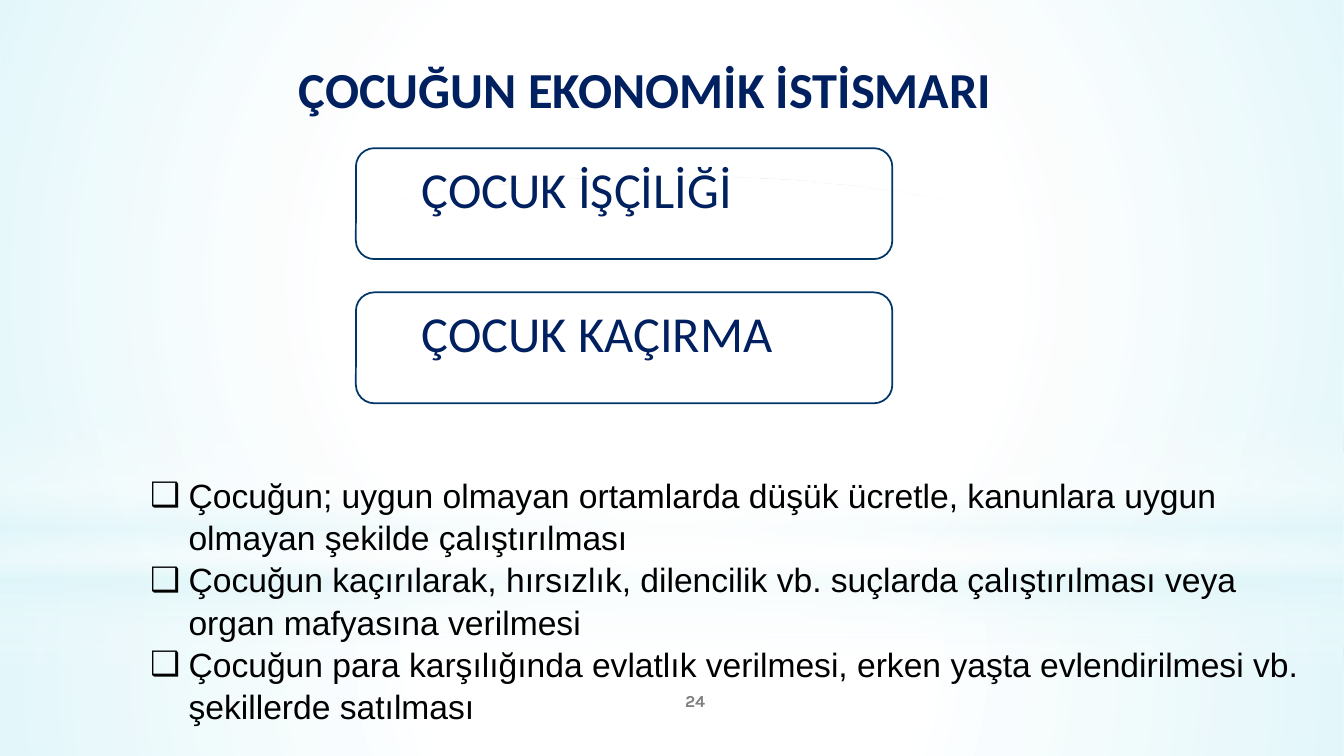
from dataclasses import dataclass
from typing import Optional

from lxml.etree import SubElement
from pptx import Presentation
from pptx.dml.color import RGBColor
from pptx.enum.shapes import MSO_SHAPE
from pptx.enum.text import MSO_ANCHOR, MSO_AUTO_SIZE, PP_ALIGN
from pptx.oxml import parse_xml
from pptx.oxml.ns import nsdecls, qn
from pptx.util import Inches, Pt


@dataclass(frozen=True)
class Theme:
    navy: str = "002060"
    outline: str = "003768"
    grey: str = "808080"
    black: str = "000000"
    white: str = "FFFFFF"
    aqua: str = "DBF5F9"
    heading_size: int = 36
    body_size: int = 24
    number_size: int = 12
    heading_font: str = "Calibri"
    body_font: str = "Arial"
    number_font: str = "Karla"


@dataclass(frozen=True)
class Frame:
    """Left, top, width and height in percent of the slide."""

    left: float
    top: float
    width: float
    height: float


@dataclass(frozen=True)
class Glow:
    frame: Frame
    stops: tuple
    geometry: MSO_SHAPE = MSO_SHAPE.RECTANGLE
    radial: bool = True


THEME = Theme()
SLIDE_WIDTH, SLIDE_HEIGHT = Inches(13.33), Inches(7.5)
HANGING_INDENT = Inches(0.38)

GLOWS = (
    Glow(Frame(0, 74.4, 100, 25.6),
         ((0, THEME.white, 91), (37, THEME.white, 76), (100, THEME.aqua, 79))),
    Glow(Frame(0, 0, 100, 74.4),
         ((0, THEME.white, 89), (48, THEME.white, 62), (100, THEME.aqua, 79))),
    Glow(Frame(0, 54.93, 100, 33.33),
         ((0, THEME.white, 0), (29, THEME.white, 30), (45, THEME.aqua, 40),
          (55, THEME.white, 26), (65, THEME.aqua, 60), (100, THEME.white, 0)),
         radial=False),
    Glow(Frame(0, 23.33, 100, 74.4),
         ((0, THEME.white, 100), (56, THEME.white, 0)), MSO_SHAPE.OVAL),
)

TITLE_FRAME = Frame(20.86, 7.07, 54.31, 8.27)
BODY_FRAME = Frame(10.43, 61.87, 87.7, 37.73)
NUMBER_FRAME = Frame(41.71, 90, 20.03, 5.33)
CARD_FRAME = Frame(26.48, 19.6, 39.91, 14.67)
CARD_PITCH = 19.07
CARDS = ("ÇOCUK İŞÇİLİĞİ", "ÇOCUK KAÇIRMA")
BODY_LINES = (
    "Çocuğun; uygun olmayan ortamlarda düşük ücretle, kanunlara uygun olmayan şekilde çalıştırılması",
    "Çocuğun kaçırılarak, hırsızlık, dilencilik vb. suçlarda çalıştırılması veya organ mafyasına verilmesi",
    "Çocuğun para karşılığında evlatlık verilmesi, erken yaşta evlendirilmesi vb. şekillerde satılması",
)


def bounds(frame: Frame) -> tuple:
    return (int(SLIDE_WIDTH * frame.left / 100), int(SLIDE_HEIGHT * frame.top / 100),
            int(SLIDE_WIDTH * frame.width / 100), int(SLIDE_HEIGHT * frame.height / 100))


def place(shape, frame: Frame) -> None:
    shape.left, shape.top, shape.width, shape.height = bounds(frame)


def write_text(shape, *lines: str, font: str, size: int, color: str, bold: bool = False,
               align: PP_ALIGN = PP_ALIGN.LEFT, anchor: MSO_ANCHOR = MSO_ANCHOR.TOP,
               bullet: Optional[str] = None, line_spacing: float = 1.0) -> None:
    text_frame = shape.text_frame
    text_frame.word_wrap = True
    text_frame.auto_size = MSO_AUTO_SIZE.NONE
    text_frame.vertical_anchor = anchor
    for index, line in enumerate(lines):
        paragraph = text_frame.paragraphs[0] if index == 0 else text_frame.add_paragraph()
        if bullet:
            properties = paragraph._p.get_or_add_pPr()
            properties.set("marL", str(HANGING_INDENT))
            properties.set("indent", str(-HANGING_INDENT))
            SubElement(properties, qn("a:buChar")).set("char", bullet)
        paragraph.alignment = align
        paragraph.space_before = Pt(0)
        paragraph.line_spacing = line_spacing
        run = paragraph.add_run()
        run.text = line
        run.font.name = font
        run.font.size = Pt(size)
        run.font.bold = bold
        run.font.color.rgb = RGBColor.from_string(color)


def add_plain_shape(slide, geometry: MSO_SHAPE, frame: Frame):
    shape = slide.shapes.add_shape(geometry, *bounds(frame))
    shape.shadow.inherit = False
    shape.fill.background()
    shape.line.fill.background()
    return shape


def add_glow(slide, glow: Glow) -> None:
    shape = add_plain_shape(slide, glow.geometry, glow.frame)
    stops = "".join(
        f'<a:gs pos="{position * 1000}"><a:srgbClr val="{color}">'
        f'<a:alpha val="{opacity * 1000}"/></a:srgbClr></a:gs>'
        for position, color, opacity in glow.stops)
    direction = ('<a:path path="circle"><a:fillToRect l="50000" t="50000" r="50000" b="50000"/></a:path>'
                 if glow.radial else '<a:lin ang="5400000" scaled="0"/>')
    gradient = parse_xml(f'<a:gradFill {nsdecls("a")} rotWithShape="1">'
                         f'<a:gsLst>{stops}</a:gsLst>{direction}</a:gradFill>')
    properties = shape.element.spPr
    properties.replace(properties.find(qn("a:noFill")), gradient)


def add_card(slide, row: int, label: str) -> None:
    frame = Frame(CARD_FRAME.left, CARD_FRAME.top + row * CARD_PITCH,
                  CARD_FRAME.width, CARD_FRAME.height)
    card = add_plain_shape(slide, MSO_SHAPE.ROUNDED_RECTANGLE, frame)
    card.line.color.rgb = RGBColor.from_string(THEME.outline)
    card.line.width = Pt(1.25)
    card.text_frame.margin_left = Inches(0.6)
    card.text_frame.margin_top = Inches(0.04)
    write_text(card, label, font=THEME.heading_font, size=THEME.heading_size, color=THEME.navy)


def build_slide(presentation) -> None:
    slide = presentation.slides.add_slide(presentation.slide_layouts[1])
    title, body = slide.shapes.title, slide.placeholders[1]
    for glow in GLOWS:
        add_glow(slide, glow)

    number = slide.shapes.add_textbox(*bounds(NUMBER_FRAME))
    write_text(number, "24", font=THEME.number_font, size=THEME.number_size, color=THEME.grey,
               bold=True, align=PP_ALIGN.CENTER, anchor=MSO_ANCHOR.MIDDLE)

    shape_tree = title.element.getparent()
    shape_tree.append(title.element)
    place(title, TITLE_FRAME)
    write_text(title, "ÇOCUĞUN EKONOMİK İSTİSMARI", font=THEME.heading_font,
               size=THEME.heading_size, color=THEME.navy, bold=True, align=PP_ALIGN.CENTER)

    for row, label in enumerate(CARDS):
        add_card(slide, row, label)

    shape_tree.append(body.element)
    place(body, BODY_FRAME)
    write_text(body, *BODY_LINES, font=THEME.body_font, size=THEME.body_size,
               color=THEME.black, bullet="❑", line_spacing=1.05)


def main() -> None:
    presentation = Presentation()
    presentation.slide_width, presentation.slide_height = SLIDE_WIDTH, SLIDE_HEIGHT
    build_slide(presentation)
    presentation.save("out.pptx")


if __name__ == "__main__":
    main()
